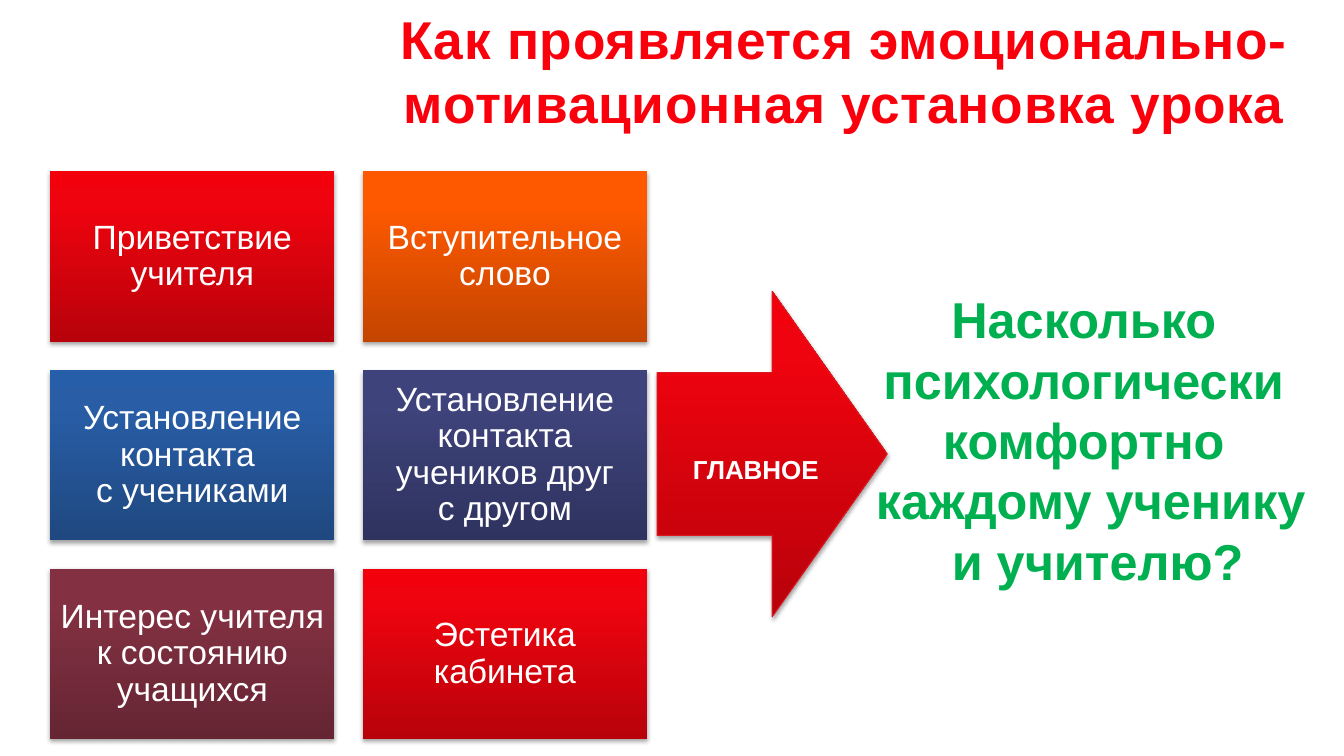
from lxml import etree
from pptx import Presentation
from pptx.dml.color import RGBColor
from pptx.enum.shapes import MSO_SHAPE
from pptx.enum.text import MSO_ANCHOR, PP_ALIGN
from pptx.oxml.ns import qn
from pptx.util import Pt

RECTANGLE, RIGHT_ARROW = MSO_SHAPE.RECTANGLE, MSO_SHAPE.RIGHT_ARROW
TOP, MIDDLE = MSO_ANCHOR.TOP, MSO_ANCHOR.MIDDLE
CENTER = PP_ALIGN.CENTER

COLORS = {"title": "F9000C", "question": "00B050", "white": "FFFFFF",
          "arrow_line": "DA1A23", "shadow": "000000"}
GRADIENTS = {
    "red": ("B8020B", "EE030E", "F2000C"),
    "orange": ("C44500", "FE5900", "FF5A00"),
    "blue": ("1F4880", "295EA7", "265EAA"),
    "indigo": ("2F335F", "3E437B", "3D427D"),
    "wine": ("652533", "833142", "852F42"),
}
STOPS = (0, 80000, 100000)
SIGNS = [
    ("Приветствие учителя", "red"),
    ("Вступительное слово", "orange"),
    ("Установление контакта \nс учениками", "blue"),
    ("Установление контакта учеников друг\nс другом", "indigo"),
    ("Интерес учителя к состоянию учащихся", "wine"),
    ("Эстетика кабинета", "red"),
]


def write(shape, text, size, color="white", bold=False, anchor=MIDDLE, wrap=True,
          line_spacing=None, insets=(7.2, 3.6, 7.2, 3.6), **run_attributes):
    """Put centred formatted text into a shape."""
    frame = shape.text_frame
    frame.word_wrap = wrap
    frame.vertical_anchor = anchor
    (frame.margin_left, frame.margin_top,
     frame.margin_right, frame.margin_bottom) = map(Pt, insets)
    paragraph = frame.paragraphs[0]
    paragraph.text = text.replace("\n", "\v")
    paragraph.alignment = CENTER
    if line_spacing:
        paragraph.line_spacing = line_spacing
    for run in paragraph.runs:
        run.font.name = "Arial"
        run.font.size = Pt(size)
        run.font.bold = bold
        run.font.color.rgb = RGBColor.from_string(COLORS[color])
        for attribute, value in run_attributes.items():
            run.font._element.set(attribute, value)


def add_color(parent, color):
    """Append an RGB colour element to an XML parent."""
    return etree.SubElement(parent, qn("a:srgbClr"), val=color)


def add_glossy(slide, preset, box, gradient):
    """Draw a shape with a vertical gradient and a soft shadow below."""
    shape = slide.shapes.add_shape(preset, *map(Pt, box))
    shape.fill.gradient()
    shape.fill.gradient_angle = 90
    properties = shape._element.spPr
    stop_list = properties.find(qn("a:gradFill")).find(qn("a:gsLst"))
    for stop in list(stop_list):
        stop_list.remove(stop)
    for position, color in zip(STOPS, GRADIENTS[gradient]):
        add_color(etree.SubElement(stop_list, qn("a:gs"), pos=str(position)), color)
    shape.line.fill.background()
    shape.shadow.inherit = False
    shadow = etree.SubElement(properties.find(qn("a:effectLst")), qn("a:outerShdw"),
                              blurRad=str(Pt(3.1)), dist=str(Pt(1.8)),
                              dir="5400000", rotWithShape="0")
    etree.SubElement(add_color(shadow, COLORS["shadow"]), qn("a:alpha"), val="35000")
    return shape


def add_title(slide, box):
    """Write the slide heading."""
    heading = slide.shapes.add_textbox(*map(Pt, box))
    write(heading, "Как проявляется эмоционально-мотивационная установка урока",
          38, "title", bold=True, spc="50")


def add_signs(slide, box, columns=2, gap=20.2):
    """Lay out the signs of the attitude as a grid of tiles."""
    left, top, width, height = box
    rows = len(SIGNS) // columns
    tile_width = (width - gap * (columns - 1)) / columns
    tile_height = (height - gap * (rows - 1)) / rows
    for index, (sign, gradient) in enumerate(SIGNS):
        row, column = divmod(index, columns)
        tile = add_glossy(slide, RECTANGLE,
                          (left + column * (tile_width + gap),
                           top + row * (tile_height + gap),
                           tile_width, tile_height), gradient)
        write(tile, sign, 24, line_spacing=0.9, insets=(7, 7, 7, 7))


def add_main_arrow(slide, box):
    """Draw the arrow that leads to the main question."""
    arrow = add_glossy(slide, RIGHT_ARROW, box, "red")
    arrow.line.color.rgb = RGBColor.from_string(COLORS["arrow_line"])
    arrow.line.width = Pt(0.75)
    write(arrow, "ГЛАВНОЕ", 32, bold=True, wrap=False,
          insets=(24.7, 3.6, 7.2, 3.6), baseline="-25000")


def add_question(slide, box):
    """Write the main question."""
    question = slide.shapes.add_textbox(*map(Pt, box))
    write(question, "Насколько \nпсихологически \nкомфортно \n"
          "каждому ученику\n и учителю?", 36, "question", bold=True, anchor=TOP)


def main():
    """Build and save the slide."""
    deck = Presentation()
    deck.slide_width, deck.slide_height = Pt(960), Pt(540)
    slide = deck.slides.add_slide(deck.slide_layouts[6])
    add_title(slide, (246, -1.5, 714, 103))
    add_signs(slide, (35.8, 122.2, 426.4, 405.8))
    add_main_arrow(slide, (469.4, 208, 164.4, 232.6))
    add_question(slide, (581.8, 202.3, 394.6, 225.4))
    deck.save("out.pptx")


if __name__ == "__main__":
    main()
